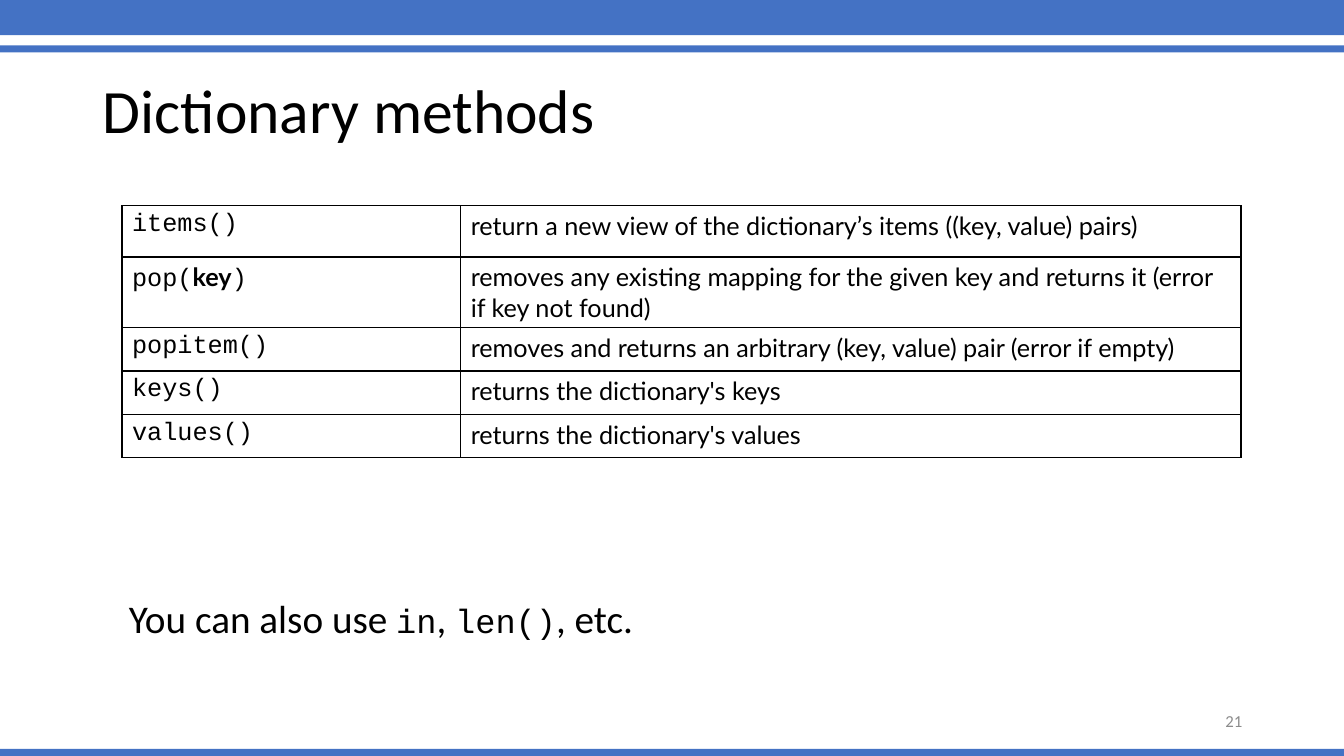
from pptx import Presentation
from pptx.dml.color import RGBColor
from pptx.enum.shapes import MSO_SHAPE as Shape
from pptx.enum.text import MSO_ANCHOR as Anchor, PP_ALIGN as Align
from pptx.oxml import parse_xml
from pptx.oxml.ns import nsdecls
from pptx.util import Inches, Pt

BLUE = RGBColor(0x44, 0x72, 0xC4)
BLACK = RGBColor(0, 0, 0)
GRAY = RGBColor(0x8C, 0x8C, 0x8C)
SANS, CODE, LATO = "Calibri", "Courier New", "Lato"


class Page:
    """Holds the slide; lengths are percentages of its width and height."""

    def __init__(self, deck):
        self.deck = deck
        self.slide = deck.slides.add_slide(deck.slide_layouts[5])
        self.shapes = self.slide.shapes

    def wide(self, share):
        return int(self.deck.slide_width * share / 100)

    def high(self, share):
        return int(self.deck.slide_height * share / 100)

    def box(self, left, top, width, height):
        return self.wide(left), self.high(top), self.wide(width), self.high(height)

    def style(self, para, runs, color=BLACK):
        for text, size, font, *bold in runs:
            run = para.add_run()
            run.text = text
            run.font.size, run.font.name = Pt(size), font
            run.font.bold = bool(bold)
            run.font.color.rgb = color

    def bar(self, top, height):
        bar = self.shapes.add_shape(Shape.RECTANGLE, *self.box(0, top, 100, height))
        bar.shadow.inherit = False
        bar.fill.solid()
        bar.fill.fore_color.rgb = BLUE
        bar.line.fill.background()

    def fill(self, shape, runs, color=BLACK, align=Align.LEFT, space=0.9):
        frame = shape.text_frame
        frame.word_wrap = True
        frame.vertical_anchor = Anchor.MIDDLE
        para = frame.paragraphs[0]
        para.alignment, para.line_spacing = align, space
        self.style(para, runs, color)

    def title(self, place, runs):
        title = self.shapes.title
        title.left, title.top, title.width, title.height = self.box(*place)
        self.fill(title, runs)

    def text(self, place, runs, **look):
        self.fill(self.shapes.add_textbox(*self.box(*place)), runs, **look)

    def edge(self, cell):
        props = cell._tc.get_or_add_tcPr()
        for spot, side in enumerate("LRTB"):
            props.insert(spot, parse_xml(
                f'<a:ln{side} {nsdecls("a")} w="12700"><a:solidFill>'
                f'<a:srgbClr val="{BLACK}"/></a:solidFill></a:ln{side}>'))

    def table(self, left, top, cols, rows, cells):
        place = self.box(left, top, sum(cols), sum(rows))
        table = self.shapes.add_table(len(rows), len(cols), *place).table
        table.first_row = table.horz_banding = False
        for col, share in zip(table.columns, cols):
            col.width = self.wide(share)
        for row, share, line in zip(table.rows, rows, cells):
            row.height = self.high(share)
            for cell, runs in zip(row.cells, line):
                cell.fill.background()
                self.edge(cell)
                self.style(cell.text_frame.paragraphs[0], runs)


def code(text):
    return text, 18, CODE


def main():
    deck = Presentation()
    deck.slide_width, deck.slide_height = Inches(13.33), Inches(7.5)
    page = Page(deck)

    # Bars at the top and bottom
    for top, height in ((-0.4, 5.07), (6, 0.93), (99.07, 0.93)):
        page.bar(top, height)

    # Title
    page.title((6.9, 5.33, 86.27, 19.33), [("Dictionary methods", 44, SANS)])

    # Methods and what they do
    methods = [
        ([code("items()")],
         "return a new view of the dictionary’s items ((key, value) pairs)"),
        ([code("pop("), ("key", 18, LATO, True), code(")")],
         "removes any existing mapping for the given key and returns it "
         "(error if key not found)"),
        ([code("popitem()")],
         "removes and returns an arbitrary (key, value) pair (error if empty)"),
        ([code("keys()")], "returns the dictionary's keys"),
        ([code("values()")], "returns the dictionary's values"),
    ]
    cells = [(name, [(use, 18, LATO)]) for name, use in methods]
    page.table(9.08, 27.2, (25.2, 58.06), (6.8, 5.33, 5.73, 5.73, 5.73), cells)

    # Closing remark
    page.text((8.85, 72.4, 84.32, 19.33), [
        ("You can also use ", 28, SANS), ("in", 24, CODE), (", ", 28, SANS),
        ("len()", 24, CODE), (", etc.", 28, SANS)])

    # Slide number
    page.text((70.67, 92.67, 22.5, 5.33), [("21", 12, SANS)],
              color=GRAY, align=Align.RIGHT, space=1.0)

    deck.save("out.pptx")


if __name__ == "__main__":
    main()
